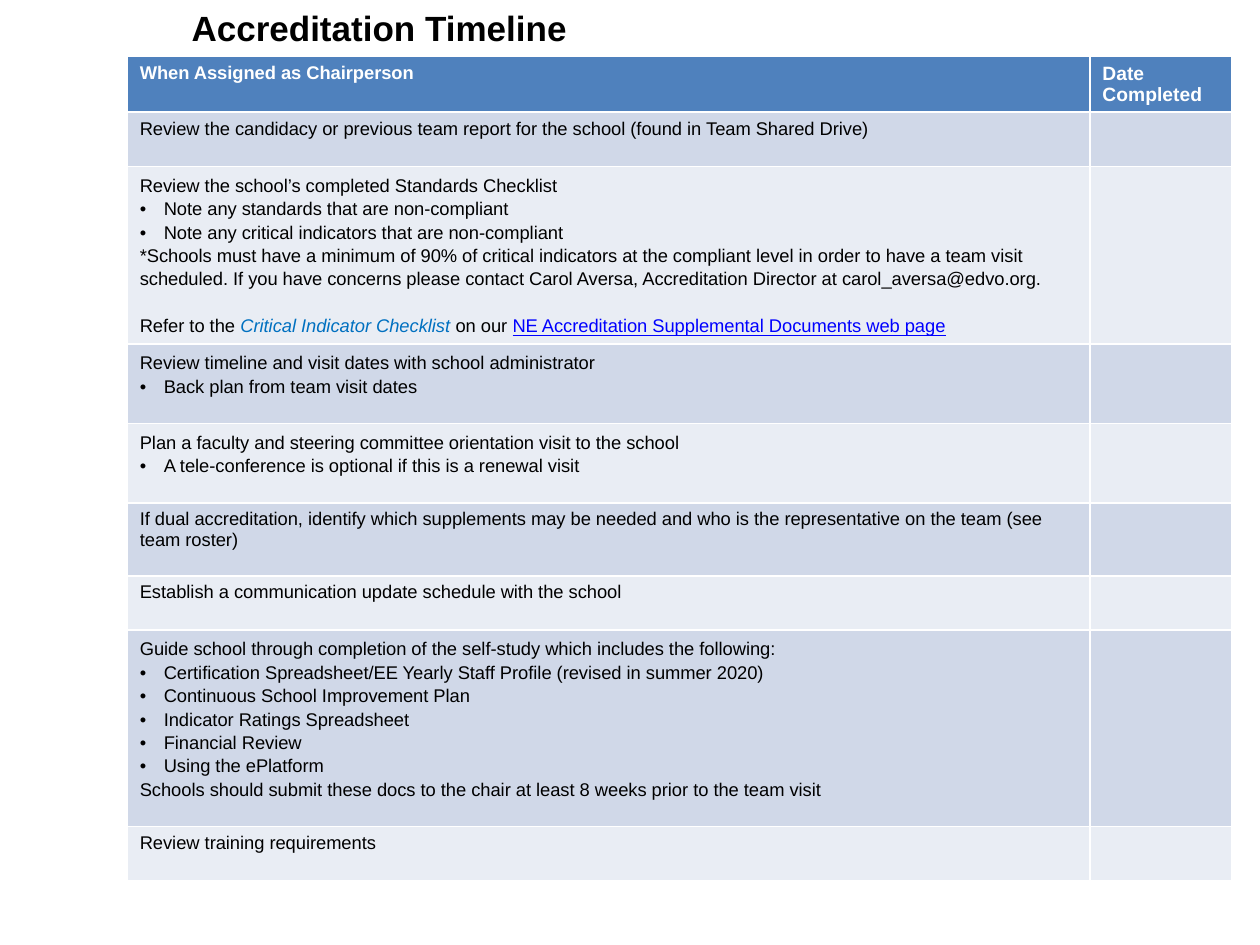
from lxml.etree import SubElement
from pptx import Presentation
from pptx.dml.color import RGBColor
from pptx.enum.text import MSO_ANCHOR, PP_ALIGN
from pptx.oxml.ns import qn
from pptx.util import Inches, Pt

FONT = "Arial"
BODY_SIZE = 10.5
BULLET = "• "
HEADER_FILL, BAND_FILLS = "4F81BD", ("D0D8E8", "E9EDF4")
BLACK, WHITE, BLUE, LINK = "000000", "FFFFFF", "0070C0", "0000FF"

TITLE = "Accreditation Timeline"
HEADERS = [("When Assigned as Chairperson", 10.5), ("Date Completed", 11)]
COLUMN_WIDTHS = [7.64, 1.13]
HEADER_HEIGHT = 0.44

# A paragraph is a string, or a list of (text, style) spans.
REFERENCE = [
    ("Refer to the ", {}),
    ("Critical Indicator Checklist ", {"color": BLUE, "italic": True}),
    ("on our ", {}),
    ("NE Accreditation Supplemental Documents web page", {"color": LINK, "underline": True}),
]

# (row height, paragraphs)
TASKS = [
    (0.43, ["Review the candidacy or previous team report for the school (found in Team Shared Drive)"]),
    (1.41, ["Review the school’s completed Standards Checklist",
            "• Note any standards that are non-compliant",
            "• Note any critical indicators that are non-compliant",
            "*Schools must have a minimum of 90% of critical indicators at the compliant level in order "
            "to have a team visit scheduled. If you have concerns please contact Carol Aversa, "
            "Accreditation Director at carol_aversa@edvo.org.",
            REFERENCE]),
    (0.63, ["Review timeline and visit dates with school administrator",
            "• Back plan from team visit dates"]),
    (0.63, ["Plan a faculty and steering committee orientation visit to the school",
            "• A tele-conference is optional if this is a renewal visit"]),
    (0.58, ["If dual accreditation, identify which supplements may be needed and who is the "
            "representative on the team (see team roster)"]),
    (0.43, ["Establish a communication update schedule with the school"]),
    (1.56, ["Guide school through completion of the self-study which includes the following:",
            "• Certification Spreadsheet/EE Yearly Staff Profile (revised in summer 2020)",
            "• Continuous School Improvement Plan",
            "• Indicator Ratings Spreadsheet",
            "• Financial Review",
            "• Using the ePlatform",
            "Schools should submit these docs to the chair at least 8 weeks prior to the team visit"]),
    (0.43, ["Review training requirements"]),
]


def rgb(color):
    return RGBColor.from_string(color)


def style_span(span, size=BODY_SIZE, color=BLACK, bold=False, italic=False, underline=False):
    font = span.font
    font.name, font.size, font.color.rgb = FONT, Pt(size), rgb(color)
    font.bold, font.italic, font.underline = bold, italic, underline


def fill_cell(cell, color):
    cell.fill.solid()
    cell.fill.fore_color.rgb = rgb(color)


def add_bullet(para):
    properties = para._p.get_or_add_pPr()
    properties.set("marL", str(Inches(0.19)))
    properties.set("indent", str(-Inches(0.19)))
    SubElement(properties, qn("a:buFont")).set("typeface", FONT)
    SubElement(properties, qn("a:buChar")).set("char", BULLET.strip())


def write_task(frame, paragraphs):
    for index, content in enumerate(paragraphs):
        para = frame.paragraphs[0] if index == 0 else frame.add_paragraph()
        if len(paragraphs) > 1:
            para.line_spacing = 1.15
        if content is REFERENCE:
            para.space_before = Pt(13.5)
        spans = [(content, {})] if isinstance(content, str) else content
        if spans[0][0].startswith(BULLET):
            add_bullet(para)
        for text, style in spans:
            span = para.add_run()
            span.text = text.removeprefix(BULLET)
            style_span(span, **style)


def add_title(slide):
    title = slide.shapes.title
    title.left, title.top = Inches(1.42), 0
    title.width, title.height = Inches(8.08), Inches(0.68)
    frame = title.text_frame
    frame.text = TITLE
    frame.vertical_anchor = MSO_ANCHOR.TOP
    para = frame.paragraphs[0]
    para.alignment = PP_ALIGN.LEFT
    style_span(para.runs[0], size=20, bold=True)


def add_timeline(slide):
    heights = [HEADER_HEIGHT] + [height for height, _ in TASKS]
    table = slide.shapes.add_table(
        len(heights), len(COLUMN_WIDTHS), Inches(1.01), Inches(0.45),
        Inches(sum(COLUMN_WIDTHS)), Inches(sum(heights))).table
    for column, width in zip(table.columns, COLUMN_WIDTHS):
        column.width = Inches(width)
    for row, height in zip(table.rows, heights):
        row.height = Inches(height)

    for cell, (text, size) in zip(table.rows[0].cells, HEADERS):
        cell.text_frame.text = text
        style_span(cell.text_frame.paragraphs[0].runs[0], size, WHITE, bold=True)
        fill_cell(cell, HEADER_FILL)
    for index, (_, paragraphs) in enumerate(TASKS):
        cells = table.rows[index + 1].cells
        write_task(cells[0].text_frame, paragraphs)
        for cell in cells:
            fill_cell(cell, BAND_FILLS[index % 2])


def main():
    deck = Presentation()
    deck.slide_width, deck.slide_height = Inches(10), Inches(7.5)
    slide = deck.slides.add_slide(deck.slide_layouts[5])
    add_title(slide)
    add_timeline(slide)
    deck.save("out.pptx")


if __name__ == "__main__":
    main()
